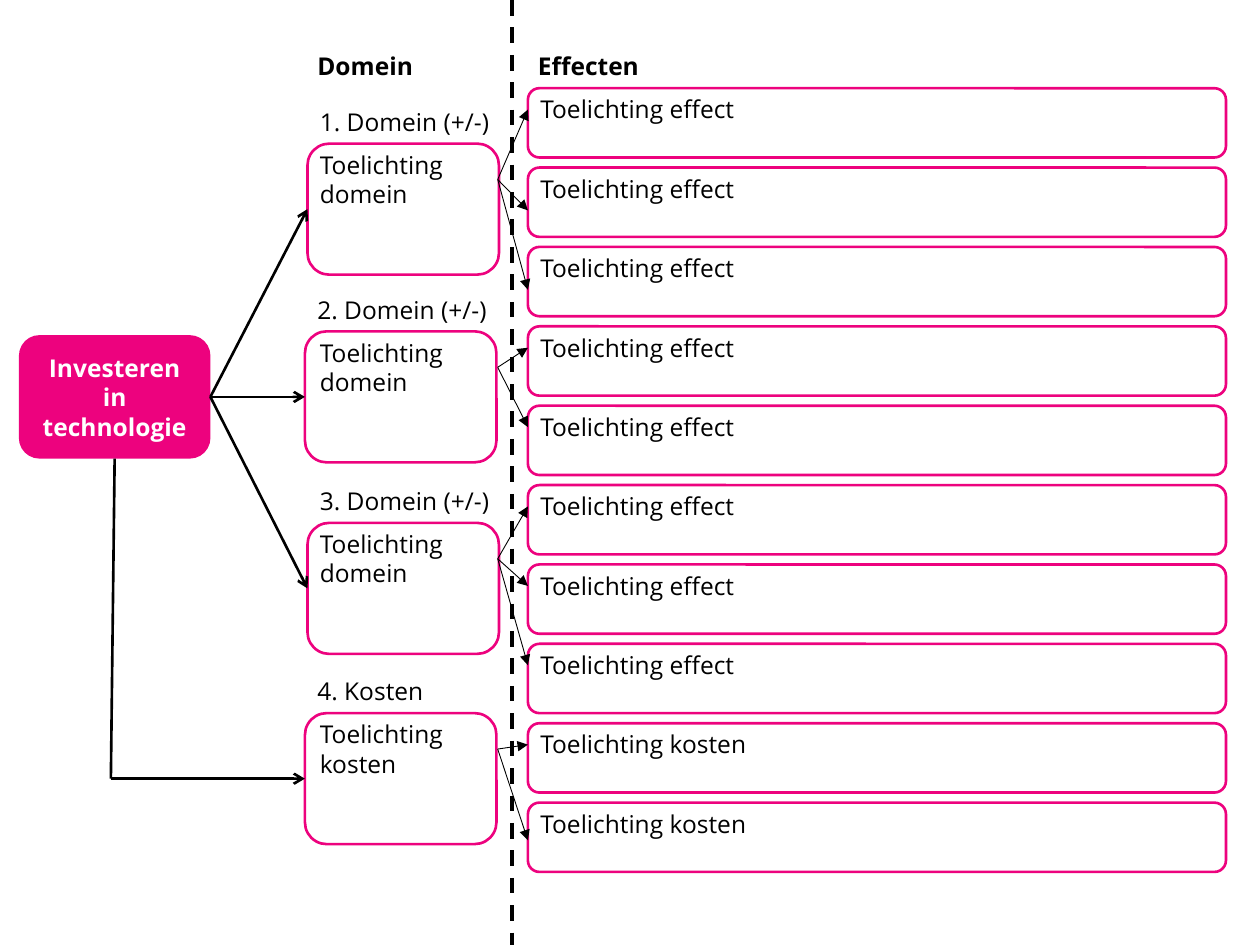
from lxml.etree import SubElement
from pptx import Presentation
from pptx.dml.color import RGBColor
from pptx.enum.dml import MSO_LINE
from pptx.enum.shapes import MSO_CONNECTOR, MSO_SHAPE
from pptx.enum.text import MSO_ANCHOR, MSO_AUTO_SIZE, PP_ALIGN
from pptx.oxml.ns import qn
from pptx.util import Inches, Pt

PINK, BLACK, WHITE = "ED027E", "000000", "FFFFFF"
FONT = "Open Sans"
SLIDE_W, SLIDE_H = 10, 7.5
TOP, RIGHT_SIDE, LEFT_SIDE, BOTTOM = 0, 3, 1, 2

DIVIDER_X = 4.06
ROOT_BOX = (0.15, 2.66, 1.52, 0.98)
DOMAIN_W, DOMAIN_H = 1.52, 1.04
DOMAIN_TEXT_X = 2.44
LINE_H, TWO_LINES_H = 0.34, 0.57
EFFECT_X, EFFECT_Y, EFFECT_W, EFFECT_H = 4.19, 0.7, 5.54, 0.55
EFFECT_PITCH = 0.63

# label, explanation, left, top, effect text, arrow drop per effect (None: joined to its text)
DOMAINS = [
    ("1. Domein (+/-)", "Toelichting domein", 2.44, 1.14, "Toelichting effect", (None, 0.34, 0.34)),
    ("2. Domein (+/-)", "Toelichting domein", 2.42, 2.63, "Toelichting effect", (None, None)),
    ("3. Domein (+/-)", "Toelichting domein", 2.44, 4.15, "Toelichting effect", (None, None, None)),
    ("4. Kosten", "Toelichting kosten", 2.42, 5.66, "Toelichting kosten", (None, 0.3)),
]


def rgb(color):
    return RGBColor.from_string(color)


def inches(*values):
    return [Inches(v) for v in values]


def write(sp, text, color=BLACK, size=14, bold=False, align=PP_ALIGN.LEFT, anchor=MSO_ANCHOR.TOP):
    tf = sp.text_frame
    tf.word_wrap = True
    tf.vertical_anchor = anchor
    p = tf.paragraphs[0]
    p.alignment = align
    r = p.add_run()
    r.text = text
    r.font.name, r.font.size, r.font.bold = FONT, Pt(size), bold
    r.font.color.rgb = rgb(color)


def add_text(s, box, text, **fmt):
    sp = s.shapes.add_textbox(*inches(*box))
    write(sp, text, **fmt)
    sp.text_frame.auto_size = MSO_AUTO_SIZE.SHAPE_TO_FIT_TEXT
    return sp


def add_rounded(s, box, fill=None, line=None):
    sp = s.shapes.add_shape(MSO_SHAPE.ROUNDED_RECTANGLE, *inches(*box))
    sp.shadow.inherit = False
    if fill:
        sp.fill.solid()
        sp.fill.fore_color.rgb = rgb(fill)
    else:
        sp.fill.background()
    if line:
        sp.line.color.rgb = rgb(line)
        sp.line.width = Pt(1.5)
    else:
        sp.line.fill.background()
    return sp


def add_line(s, start, end, width=1.5, head=None, dash=None):
    """Draw a line; each end is an (x, y) point or a (shape, side) pair."""
    points = [(0, 0) if hasattr(e[0], "shape_id") else e for e in (start, end)]
    c = s.shapes.add_connector(MSO_CONNECTOR.STRAIGHT, *inches(*points[0], *points[1]))
    for e, join in ((start, c.begin_connect), (end, c.end_connect)):
        if hasattr(e[0], "shape_id"):
            join(*e)
    c.line.color.rgb = rgb(BLACK)
    c.line.width = Pt(width)
    if dash:
        c.line.dash_style = dash
    if head:
        SubElement(c.line._get_or_add_ln(), qn("a:tailEnd"), type=head)
    SubElement(c._element.spPr, qn("a:effectLst"))
    return c


def draw_headings(s):
    add_line(s, (DIVIDER_X, 0), (DIVIDER_X, SLIDE_H), width=2.25, dash=MSO_LINE.DASH)
    for text, x, w in (("Domein", 2.42, 1.42), ("Effecten", 4.17, 1.29)):
        add_text(s, (x, 0.36, w, LINE_H), text, bold=True)


def draw_root(s, box):
    sp = add_rounded(s, box, fill=PINK)
    write(sp, "Investeren in technologie", color=WHITE, bold=True,
          align=PP_ALIGN.CENTER, anchor=MSO_ANCHOR.MIDDLE)
    return sp


def draw_domain(s, box, label, text):
    """Return the frame and the explanation inside it."""
    x, y, w, h = box
    frame = add_rounded(s, box, line=PINK)
    add_text(s, (x, y - LINE_H, 1.63, LINE_H), label)
    note = add_text(s, (DOMAIN_TEXT_X, y, 1.51, TWO_LINES_H), text)
    return frame, note


def draw_effect(s, box, text):
    x, y, w, h = box
    add_rounded(s, box, line=PINK)
    return add_text(s, (x, y, w, LINE_H), text)


def draw_root_arrows(s, root, frames):
    *domains, costs = frames
    for frame in domains:
        add_line(s, (root, RIGHT_SIDE), (frame, LEFT_SIDE), head="arrow")
    corner = (0.88, 6.18)
    add_line(s, (root, BOTTOM), corner)
    add_line(s, corner, (costs, LEFT_SIDE), head="arrow")


def main():
    prs = Presentation()
    prs.slide_width, prs.slide_height = inches(SLIDE_W, SLIDE_H)
    s = prs.slides.add_slide(prs.slide_layouts[6])
    draw_headings(s)
    root = draw_root(s, ROOT_BOX)
    frames, row = [], 0
    for label, text, x, y, effect, drops in DOMAINS:
        frame, note = draw_domain(s, (x, y, DOMAIN_W, DOMAIN_H), label, text)
        frames.append(frame)
        for drop in drops:
            effect_y = EFFECT_Y + row * EFFECT_PITCH
            effect_text = draw_effect(s, (EFFECT_X, effect_y, EFFECT_W, EFFECT_H), effect)
            end = (EFFECT_X, effect_y + drop) if drop else (effect_text, LEFT_SIDE)
            add_line(s, (note, RIGHT_SIDE), end, width=0.5, head="triangle")
            row += 1
    draw_root_arrows(s, root, frames)
    prs.save("out.pptx")


if __name__ == "__main__":
    main()
